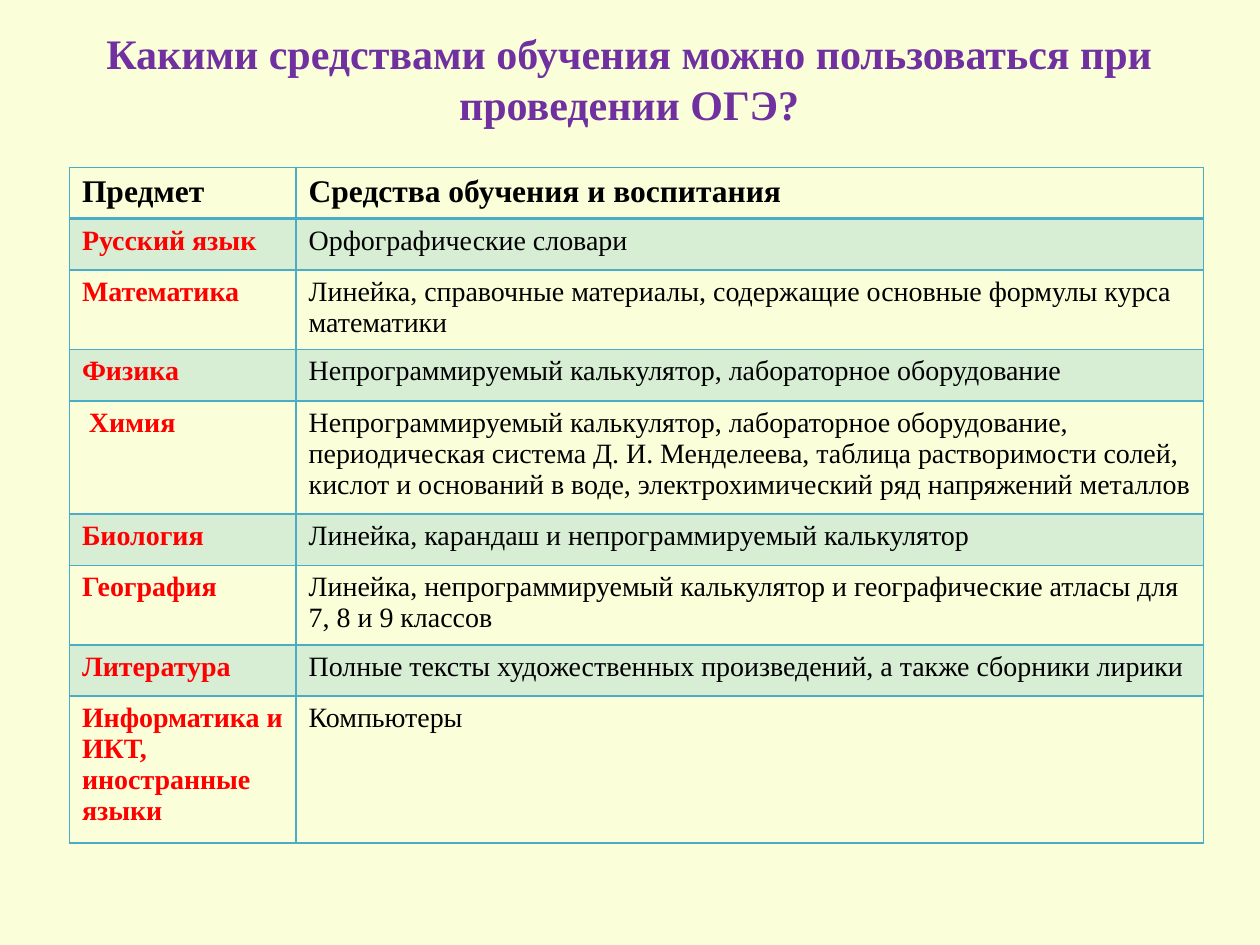
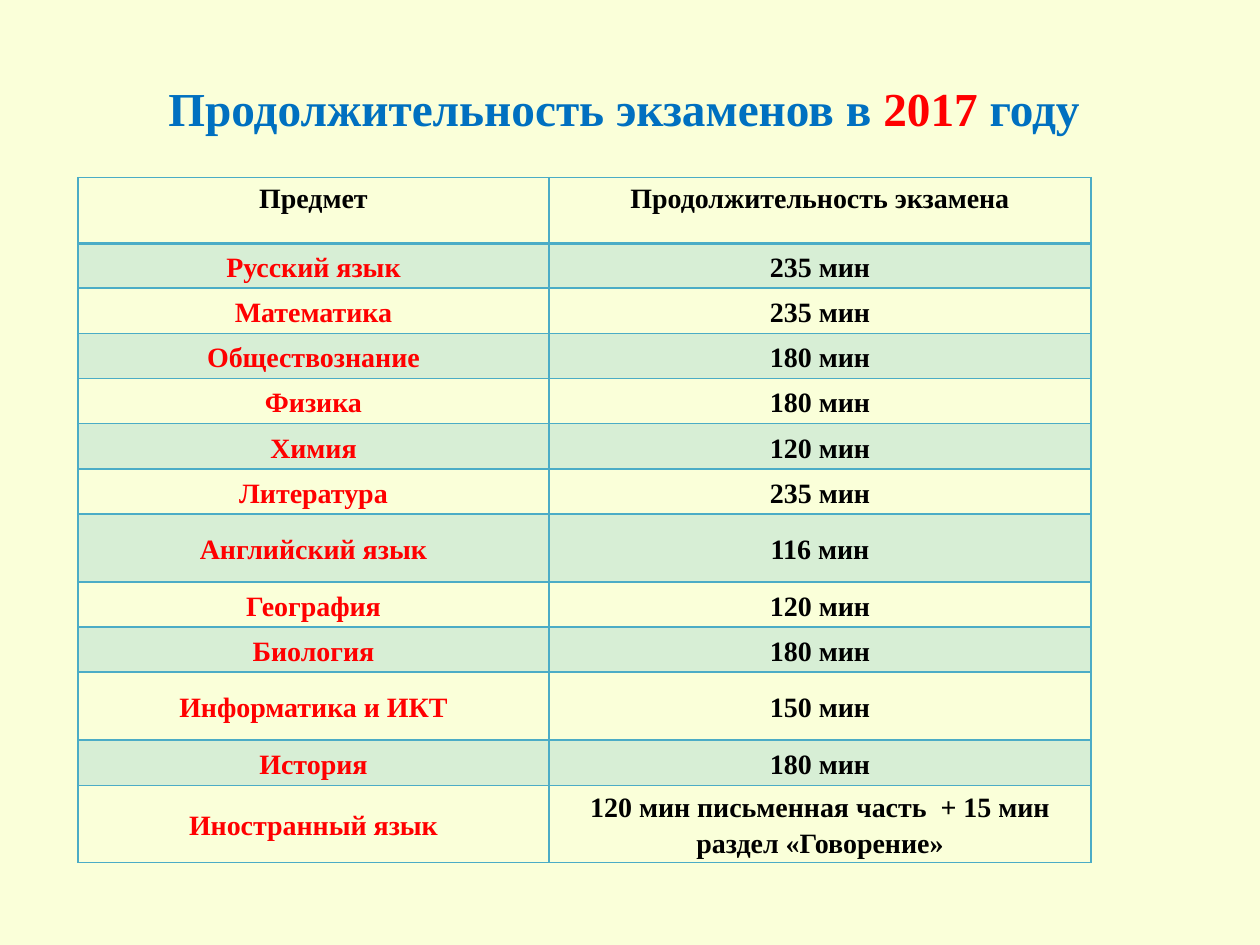
from lxml.etree import SubElement
from pptx import Presentation
from pptx.dml.color import RGBColor
from pptx.enum.text import MSO_ANCHOR, PP_ALIGN
from pptx.oxml.ns import qn
from pptx.util import Cm, Pt

FONT = "Times New Roman"
HUES = {
    "page": "FAFFD9", "band": "D7EED5", "rule": "4BACC6", "text": "000000",
    "red": "FF0000", "blue": "0070C0", "violet": "7030A0",
}
INSET = Cm(0.18)

TOOLS = [
    ("Предмет", "Средства обучения и воспитания"),
    ("Русский язык", "Орфографические словари"),
    ("Математика", "Линейка, справочные материалы, содержащие основные "
     "формулы курса математики"),
    ("Физика", "Непрограммируемый калькулятор, лабораторное оборудование"),
    (" Химия", "Непрограммируемый калькулятор, лабораторное оборудование, "
     "периодическая система Д. И. Менделеева, таблица растворимости солей, "
     "кислот и оснований в воде, электрохимический ряд напряжений металлов"),
    ("Биология", "Линейка, карандаш и непрограммируемый калькулятор"),
    ("География", "Линейка, непрограммируемый калькулятор и географические "
     "атласы для 7, 8 и 9 классов"),
    ("Литература", "Полные тексты художественных произведений, "
     "а также сборники лирики"),
    ("Информатика и ИКТ, иностранные языки", "Компьютеры"),
]
TIMES = [
    ("Предмет", "Продолжительность экзамена"),
    ("Русский язык", "235 мин"),
    ("Математика", "235 мин"),
    ("Обществознание", "180 мин"),
    ("Физика", "180 мин"),
    ("Химия", "120 мин"),
    ("Литература", "235 мин"),
    ("Английский язык", "116 мин"),
    ("География", "120 мин"),
    ("Биология", "180 мин"),
    ("Информатика и ИКТ", "150 мин"),
    ("История", "180 мин"),
    ("Иностранный язык",
     "120 мин письменная часть  + 15 мин раздел «Говорение»"),
]


def rgb(name):
    return RGBColor.from_string(HUES[name])


def write(frame, text, size=16, hue="text", bold=True, align=PP_ALIGN.LEFT,
          lead=None, gap=None):
    """Fill a frame; text is a string or a list of (text, hue) pairs."""
    para = frame.paragraphs[0]
    para.alignment = align
    if lead:
        para.line_spacing = lead
    if gap is not None:
        para.space_before = para.space_after = Pt(gap)
    for part, tone in [(text, hue)] if isinstance(text, str) else text:
        run = para.add_run()
        run.text = part
        font = run.font
        font.name, font.size, font.bold = FONT, Pt(size), bold
        font.color.rgb = rgb(tone)


def border(cell, head, below):
    """Rule all four sides; the line under the header is heavier."""
    props = cell._tc.get_or_add_tcPr()
    widths = {"lnL": 1, "lnR": 1, "lnT": 2 if below else 1, "lnB": 2 if head else 1}
    for side, width in widths.items():
        line = SubElement(props, qn(f"a:{side}"), w=str(Pt(width)))
        fill = SubElement(line, qn("a:solidFill"))
        SubElement(fill, qn("a:srgbClr"), val=HUES["rule"])


def add_page(deck):
    page = deck.slides.add_slide(deck.slide_layouts[6])
    page.background.fill.solid()
    page.background.fill.fore_color.rgb = rgb("page")
    return page


def add_title(page, box, text, **style):
    frame = page.shapes.add_textbox(*map(Cm, box)).text_frame
    frame.word_wrap = True
    frame.vertical_anchor = MSO_ANCHOR.MIDDLE
    write(frame, text, align=PP_ALIGN.CENTER, **style)


def add_grid(page, spot, cols, rows, data, style):
    """Draw a banded table; style(row, col) gives the text format."""
    size = sum(cols), sum(rows)
    grid = page.shapes.add_table(len(rows), len(cols),
                                 *map(Cm, (*spot, *size))).table
    grid.horz_banding = False
    for col, width in zip(grid.columns, cols):
        col.width = Cm(width)
    for row, height in zip(grid.rows, rows):
        row.height = Cm(height)
    for r, line in enumerate(data):
        for c, text in enumerate(line):
            cell = grid.cell(r, c)
            border(cell, r == 0, r == 1)
            cell.fill.solid()
            cell.fill.fore_color.rgb = rgb("band" if r % 2 else "page")
            hue = "red" if r and c == 0 else "text"
            write(cell.text_frame, text, hue=hue, **style(r, c))
    return grid


def tools_page(deck):
    page = add_page(deck)
    add_title(page, (1.27, 0.36, 22.83, 2.44),
              "Какими средствами обучения можно пользоваться при проведении ОГЭ?",
              size=24, hue="violet")

    def style(r, c):
        return {"size": 16 if r else 18, "bold": r == 0 or c == 0}

    add_grid(page, (1.4, 3.38), (4.57, 18.29), [1.03] * len(TOOLS), TOOLS, style)


def times_page(deck):
    page = add_page(deck)
    add_title(page, (1.27, 0.76, 22.86, 2.82),
              [("Продолжительность экзаменов в ", "blue"), ("2017 ", "red"),
               ("году ", "blue")], size=27)

    def style(r, c):
        body = {"lead": 1.15, "gap": 6} if r else {}
        return {"align": PP_ALIGN.CENTER, **body}

    # Header, then even rows with two taller ones
    tall = "Английский язык", "Информатика и ИКТ"
    rows = [1.32] + [1.37 if name in tall else 0.91 for name, _ in TIMES[1:]]
    grid = add_grid(page, (1.57, 3.58), (9.5, 10.92), rows, TIMES, style)

    # Tight, centred body cells
    for cell in list(grid.iter_cells())[2:]:
        cell.vertical_anchor = MSO_ANCHOR.MIDDLE
        cell.margin_left = cell.margin_right = INSET
        cell.margin_top = cell.margin_bottom = 0


def main():
    deck = Presentation()
    deck.slide_width, deck.slide_height = Cm(25.4), Cm(19.05)
    tools_page(deck)
    times_page(deck)
    deck.save("out.pptx")


if __name__ == "__main__":
    main()
